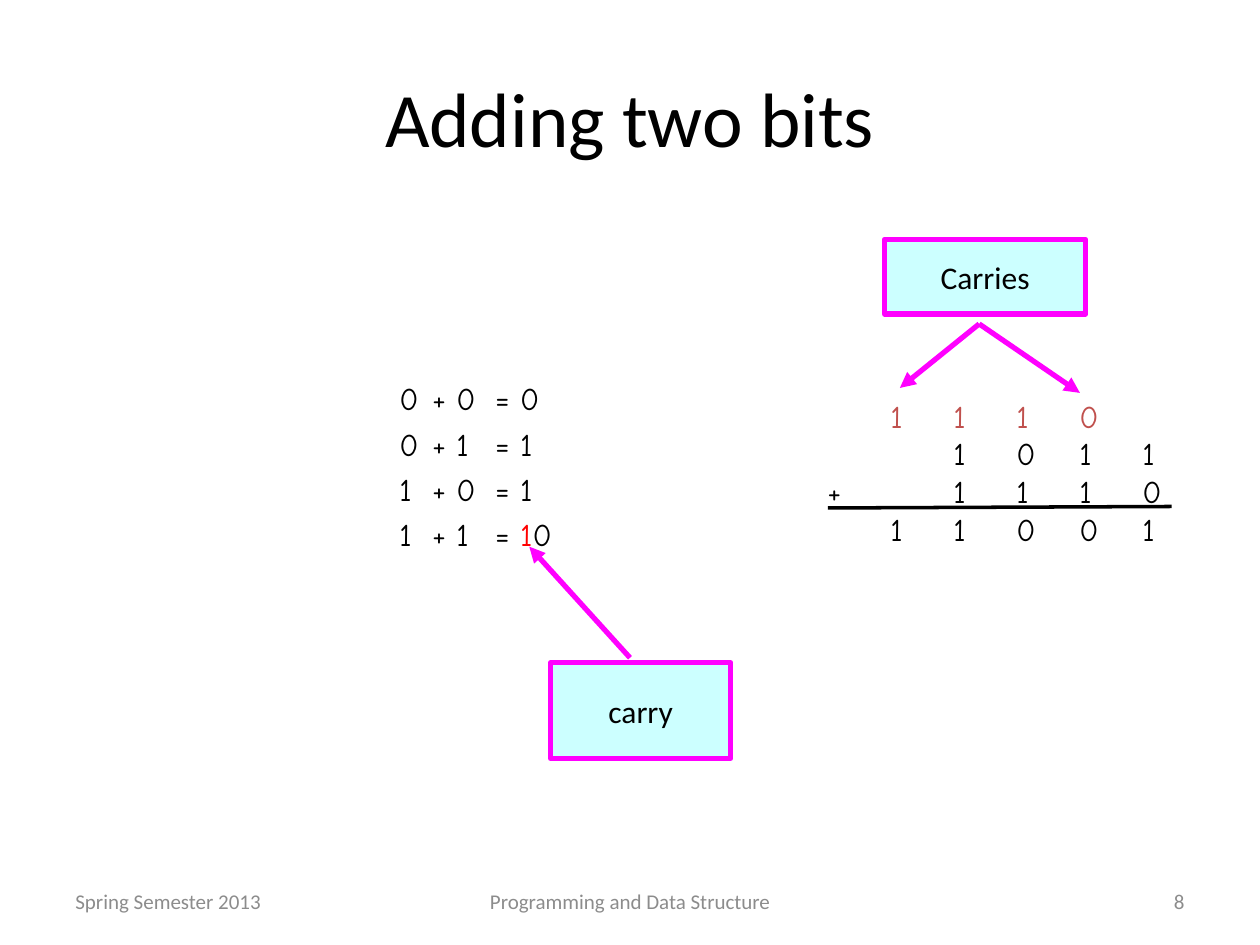
from dataclasses import dataclass

from lxml import etree
from pptx import Presentation
from pptx.dml.color import RGBColor
from pptx.enum.shapes import MSO_CONNECTOR, MSO_SHAPE
from pptx.enum.text import MSO_ANCHOR, MSO_AUTO_SIZE, PP_ALIGN
from pptx.oxml.ns import qn
from pptx.util import Cm, Pt

LEFT, CENTER, RIGHT = PP_ALIGN.LEFT, PP_ALIGN.CENTER, PP_ALIGN.RIGHT
MIDDLE = MSO_ANCHOR.MIDDLE
GROW = MSO_AUTO_SIZE.SHAPE_TO_FIT_TEXT
RECTANGLE = MSO_SHAPE.RECTANGLE
STRAIGHT = MSO_CONNECTOR.STRAIGHT


@dataclass(frozen=True)
class Theme:
    body_font: str = "Calibri"
    digit_font: str = "Comic Neue"
    title_size: int = 44
    body_size: int = 18
    footer_size: int = 12
    ink: str = "000000"
    footer: str = "8C8C8C"
    carry_digit: str = "FF0000"
    carry_row: str = "C0504D"
    label_fill: str = "CCFFFF"
    accent: str = "FF00FF"
    accent_width: int = 3
    rule_width: int = 2


THEME = Theme()


def rgb(value):
    return RGBColor.from_string(value)


def apply_format(target, values):
    for name, value in values.items():
        setattr(target, name, value)


def add_span(para, text, size, color, font):
    span = para.add_run()
    span.text = text
    apply_format(span.font, {"name": font, "size": Pt(size)})
    span.font.color.rgb = rgb(color)


def add_line_of_text(page, bounds, text, size, color, align):
    box = page.shapes.add_textbox(*map(Cm, bounds))
    apply_format(box.text_frame, {"word_wrap": True, "vertical_anchor": MIDDLE})
    para = box.text_frame.paragraphs[0]
    para.alignment = align
    add_span(para, text, size, color, THEME.body_font)


def set_tabs(para, stops):
    tabs = etree.SubElement(para._p.get_or_add_pPr(), qn("a:tabLst"))
    for stop in stops:
        etree.SubElement(tabs, qn("a:tab"), pos=str(Cm(stop)), algn="l")


def add_digits(shapes, bounds, rows, stops, spacing=None):
    box = shapes.add_textbox(*map(Cm, bounds))
    frame = box.text_frame
    apply_format(frame, {"word_wrap": False, "auto_size": GROW})
    for index, row in enumerate(rows):
        para = frame.add_paragraph() if index else frame.paragraphs[0]
        if index and spacing:
            para.line_spacing = spacing
        set_tabs(para, stops)
        for text, color in row:
            add_span(para, text, THEME.body_size, color, THEME.digit_font)


def add_label(page, bounds, text):
    label = page.shapes.add_shape(RECTANGLE, *map(Cm, bounds))
    label.shadow.inherit = False
    label.fill.solid()
    label.fill.fore_color.rgb = rgb(THEME.label_fill)
    label.line.color.rgb = rgb(THEME.accent)
    label.line.width = Pt(THEME.accent_width)
    apply_format(label.text_frame, {"word_wrap": False, "vertical_anchor": MIDDLE})
    para = label.text_frame.paragraphs[0]
    para.alignment = CENTER
    add_span(para, text, THEME.body_size, THEME.ink, THEME.body_font)


def add_line(shapes, start, end, color, width):
    line = shapes.add_connector(STRAIGHT, *map(Cm, start + end))
    line.line.color.rgb = rgb(color)
    line.line.width = Pt(width)
    etree.SubElement(line._element.spPr, qn("a:effectLst"))
    return line


def add_arrow(page, start, end):
    arrow = add_line(page.shapes, start, end, THEME.accent, THEME.accent_width)
    etree.SubElement(arrow.line._get_or_add_ln(), qn("a:tailEnd"), type="triangle")


def add_footer(page):
    for left, width, text, align in (
        (1.27, 5.92, "Spring Semester 2013", LEFT),
        (8.68, 8.05, "Programming and Data Structure", CENTER),
        (18.21, 5.92, "8", RIGHT),
    ):
        add_line_of_text(page, (left, 17.65, width, 1.02), text,
                         THEME.footer_size, THEME.footer, align)


def add_bit_table(page):
    rows = [[(f"{a}\t+ {b}\t= {a + b}", THEME.ink)]
            for a, b in ((0, 0), (0, 1), (1, 0))]
    rows.append([("1\t+ 1\t= ", THEME.ink), ("1", THEME.carry_digit), ("0", THEME.ink)])
    add_digits(page.shapes, (7.8, 7.52, 3.63, 3.76), rows, (0.66, 1.93), 1.2)


def add_long_addition(page):
    group = page.shapes.add_group_shape()
    rows = [[("\t".join(cells), color)] for cells, color in (
        (("", *"1110", ""), THEME.carry_row),
        (("", "", *"1011"), THEME.ink),
        (("+", "", *"1110"), THEME.ink),
        (("", *"11001"), THEME.ink),
    )]
    stops = [1.27 * column for column in range(1, 7)]
    add_digits(group.shapes, (16.43, 7.87, 7.24, 3.3), rows, stops)
    add_line(group.shapes, (16.69, 10.24), (23.62, 10.21), THEME.ink, THEME.rule_width)


def main():
    deck = Presentation()
    apply_format(deck, {"slide_width": Cm(25.4), "slide_height": Cm(19.05)})
    page = deck.slides.add_slide(deck.slide_layouts[6])
    add_line_of_text(page, (1.27, 0.76, 22.86, 3.18), "Adding two bits",
                     THEME.title_size, THEME.ink, CENTER)
    add_footer(page)
    add_bit_table(page)
    add_label(page, (11.1, 13.36, 3.63, 1.93), "carry")
    add_arrow(page, (12.7, 13.26), (10.67, 11.02))
    add_long_addition(page)
    add_label(page, (17.83, 4.83, 4.06, 1.5), "Carries")
    for tip in ((18.14, 7.82), (21.77, 7.92)):
        add_arrow(page, (19.74, 6.53), tip)
    deck.save("out.pptx")


if __name__ == "__main__":
    main()
